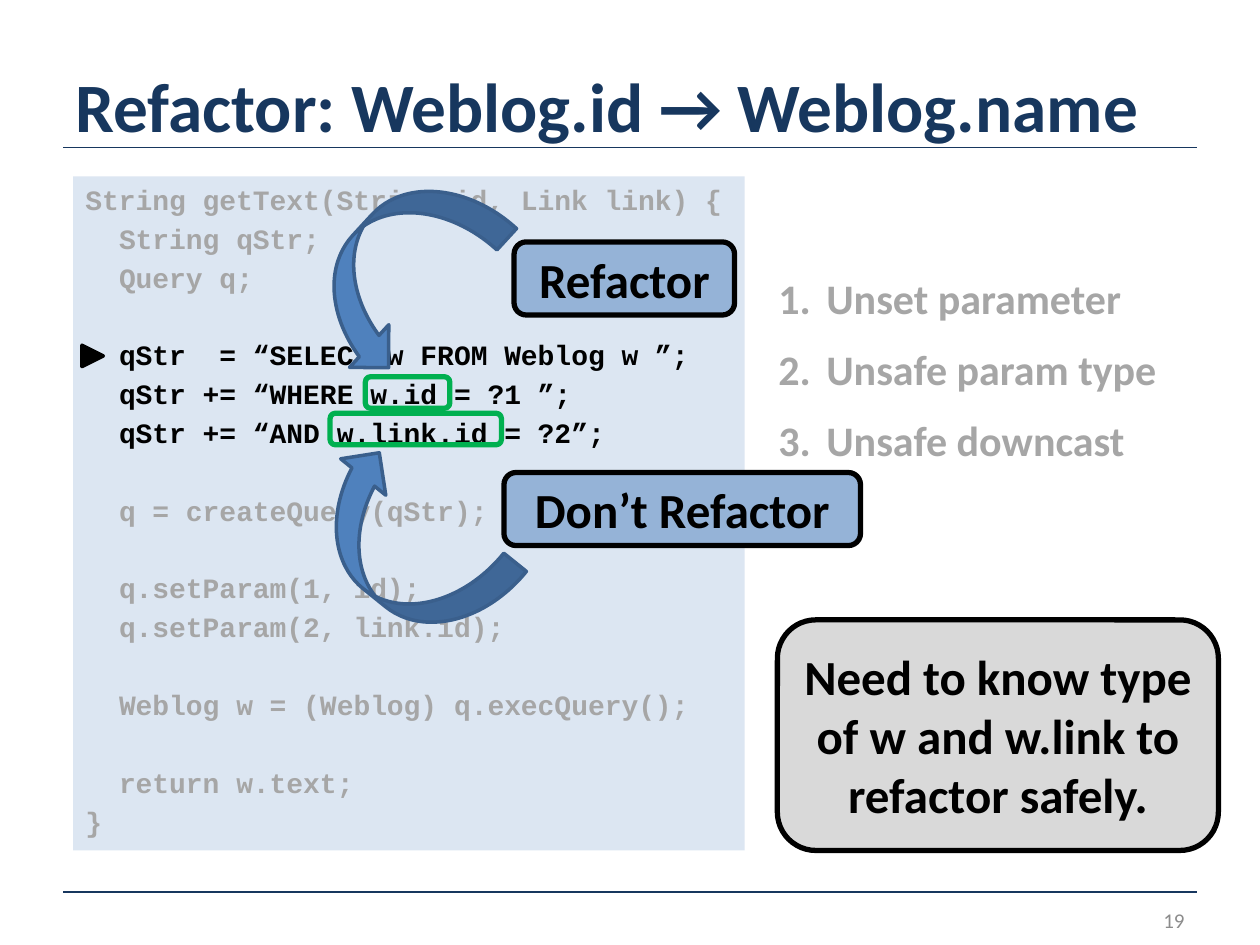
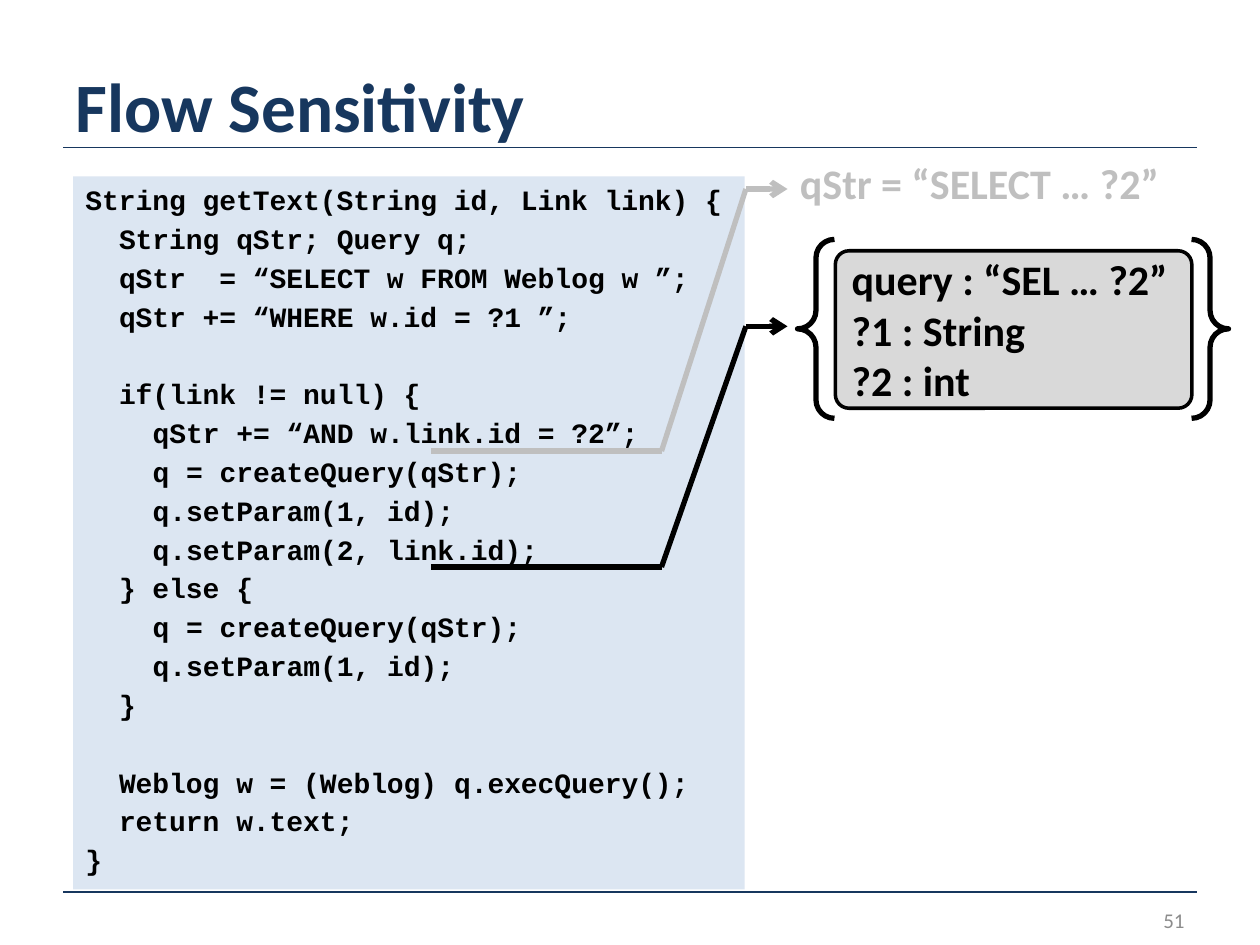
import pptx
import pptx.dml.color
import pptx.enum.shapes
import pptx.enum.text
import pptx.util
from lxml import etree
from pptx.oxml.ns import qn

Inches, Pt = pptx.util.Inches, pptx.util.Pt
SHAPE = pptx.enum.shapes.MSO_SHAPE
ALIGN = pptx.enum.text.PP_ALIGN
ANCHOR = pptx.enum.text.MSO_ANCHOR

NAVY, BLACK, GREY, PALE_GREY = "17375E", "000000", "A6A6A6", "BFBFBF"
CODE_BG, BUTTON, NOTE_BG, GREEN = "DCE6F2", "95B3D7", "D9D9D9", "00B050"
ARROW_FILL, ARROW_LINE, NUMBER = "4F81BD", "3A5F8C", "8C8C8C"
SANS, MONO = "Calibri", "Courier New"

CODE_SIZE = 16
CODE_GAP = 3         # points before each code line
CODE_PITCH = 22.2    # points from one code line to the next
CHAR_WIDTH = 9.6     # points, one monospaced character

REFACTOR_CODE = [
    "String getText(String id, Link link) {",
    "  String qStr;",
    "  Query q;",
    "",
    "  qStr  = “SELECT w FROM Weblog w ”;",
    "  qStr += “WHERE w.id = ?1 ”;",
    "  qStr += “AND w.link.id = ?2”;",
    "",
    "  q = createQuery(qStr);",
    "",
    "  q.setParam(1, id);",
    "  q.setParam(2, link.id);",
    "",
    "  Weblog w = (Weblog) q.execQuery();",
    "",
    "  return w.text;",
    "}",
]
QUERY_LINES = range(4, 7)

FLOW_CODE = [
    "String getText(String id, Link link) {",
    "  String qStr; Query q;",
    "  qStr  = “SELECT w FROM Weblog w ”;",
    "  qStr += “WHERE w.id = ?1 ”;",
    "",
    "  if(link != null) {",
    "    qStr += “AND w.link.id = ?2”;",
    "    q = createQuery(qStr);",
    "    q.setParam(1, id);",
    "    q.setParam(2, link.id);",
    "  } else {",
    "    q = createQuery(qStr);",
    "    q.setParam(1, id);",
    "  }",
    "",
    "  Weblog w = (Weblog) q.execQuery();",
    "  return w.text;",
    "}",
]

ERRORS = ["Unset parameter", "Unsafe param type", "Unsafe downcast"]
HIGHLIGHTS = [(2.9, 2.99, 0.67, 0.25), (2.62, 3.28, 1.36, 0.25)]
LABELS = [  # text, box, fill
    ("Refactor", (4.08, 1.92, 1.75, 0.58), BUTTON),
    ("Don’t Refactor", (4, 3.75, 2.83, 0.58), BUTTON),
    ("Need to know type of w and w.link to refactor safely.",
     (6.17, 4.92, 3.5, 1.83), NOTE_BG),
]
CURVED_ARROWS = [  # box, rotation, flipped
    ((2.31, 1.68, 1.73, 0.92), 132.6, False),
    ((2.35, 3.89, 1.73, 0.92), 218.9, True),
]
QUERY_STATE = ["query : “SEL … ?2”", "?1 : String", "?2 : int"]


def rgb(color):
    return pptx.dml.color.RGBColor.from_string(color)


def set_all(obj, values):
    for name, value in values.items():
        setattr(obj, name, value)


def paint(sp, fill=None, line=None, width=3):
    if fill:
        sp.fill.solid()
        sp.fill.fore_color.rgb = rgb(fill)
    else:
        sp.fill.background()
    if line:
        sp.line.color.rgb = rgb(line)
        sp.line.width = Pt(width)
    else:
        sp.line.fill.background()


def add_shape(s, kind, box, fill=None, line=None, width=3, adj=None):
    sp = s.shapes.add_shape(kind, *map(Inches, box))
    sp.shadow.inherit = False
    paint(sp, fill, line, width)
    if adj is not None:
        sp.adjustments[0] = adj
    return sp


def write(sp, lines, size, color, font=SANS, bold=True, wrap=True,
          anchor=ANCHOR.MIDDLE, **para):
    """Fill a shape with one paragraph per line and return the paragraphs."""
    tf = sp.text_frame
    set_all(tf, {"word_wrap": wrap, "vertical_anchor": anchor})
    paragraphs = []
    for i, line in enumerate(lines):
        p = tf.add_paragraph() if i else tf.paragraphs[0]
        set_all(p, {"alignment": ALIGN.LEFT, **para})
        r = p.add_run()
        r.text = line
        set_all(r.font, {"name": font, "size": Pt(size), "bold": bold})
        r.font.color.rgb = rgb(color)
        paragraphs.append(p)
    return paragraphs


def add_text(s, box, lines, size, color, **style):
    sp = s.shapes.add_textbox(*map(Inches, box))
    return write(sp, lines, size, color, **style)


def add_line(s, start, end, color, width=3, arrow=False):
    c = s.shapes.add_connector(pptx.enum.shapes.MSO_CONNECTOR.STRAIGHT,
                               *map(Inches, start + end))
    c.line.color.rgb = rgb(color)
    c.line.width = Pt(width)
    spPr = c.element.spPr
    if arrow:
        etree.SubElement(spPr.find(qn("a:ln")), qn("a:tailEnd"), type="arrow")
    etree.SubElement(spPr, qn("a:effectLst"))


def add_code(s, code, height, color, bright=()):
    """Code panel: indents become margins, empty lines become spacing."""
    sp = add_shape(s, SHAPE.RECTANGLE, (0.58, 1.4, 5.33, height), CODE_BG)
    shown = [(i, line) for i, line in enumerate(code) if line]
    paragraphs = write(sp, [line.lstrip() for _, line in shown], CODE_SIZE,
                       color, font=MONO, anchor=ANCHOR.TOP)
    previous = -1
    for p, (i, line) in zip(paragraphs, shown):
        p.space_before = Pt(CODE_GAP + (i - previous - 1) * CODE_PITCH)
        previous = i
        indent = len(line) - len(line.lstrip())
        p._p.get_or_add_pPr().set("marL", str(Pt(indent * CHAR_WIDTH)))
        if i in bright:
            p.runs[0].font.color.rgb = rgb(BLACK)


def add_numbered_list(s, box, items):
    for p in add_text(s, box, items, 24, GREY, anchor=ANCHOR.TOP,
                      space_after=Pt(12)):
        pPr = p._p.get_or_add_pPr()
        pPr.set("marL", str(Inches(0.38)))
        pPr.set("indent", str(Inches(-0.38)))
        etree.SubElement(pPr, qn("a:buFont"), typeface="+mj-lt")
        etree.SubElement(pPr, qn("a:buAutoNum"), type="arabicPeriod")


def add_flow_arrow(s, code_y, target_y, color):
    """Underline a code line and lead from it to the state on the right."""
    start, bend, edge, tip = 3.42, 5.25, 5.92, 6.25
    add_line(s, (edge, target_y), (tip, target_y), color, arrow=True)
    add_line(s, (start, code_y), (bend, code_y), color)
    add_line(s, (edge, target_y), (bend, code_y), color)


def new_slide(prs, title, number):
    s = prs.slides.add_slide(prs.slide_layouts[6])
    for y in (1.17, 7.08):
        add_line(s, (0.5, y), (9.5, y), NAVY, 1)
    add_text(s, (0.5, 0.5, 9, 0.67), [title], 39.6, NAVY)
    add_text(s, (7.17, 7.1, 2.33, 0.4), [str(number)], 12, NUMBER,
             bold=False, alignment=ALIGN.RIGHT)
    return s


def build_refactor(prs):
    s = new_slide(prs, "Refactor: Weblog.id → Weblog.name", 19)
    add_code(s, REFACTOR_CODE, 5.35, GREY, QUERY_LINES)
    add_numbered_list(s, (6.08, 2.11, 3.42, 1.65), ERRORS)
    for box in HIGHLIGHTS:
        add_shape(s, SHAPE.ROUNDED_RECTANGLE, box, line=GREEN)
    marker = add_shape(s, SHAPE.ISOSCELES_TRIANGLE, (0.65, 2.74, 0.17, 0.17),
                       BLACK, BLACK, 2)
    marker.rotation = 90
    for text, box, fill in LABELS:
        sp = add_shape(s, SHAPE.ROUNDED_RECTANGLE, box, fill, BLACK)
        write(sp, [text], 28, BLACK, alignment=ALIGN.CENTER)
    for box, rotation, flipped in CURVED_ARROWS:
        sp = add_shape(s, SHAPE.CURVED_UP_ARROW, box, ARROW_FILL, ARROW_LINE, 2)
        sp.rotation = rotation
        if flipped:
            sp.element.spPr.get_or_add_xfrm().set("flipV", "1")


def build_flow(prs):
    s = new_slide(prs, "Flow Sensitivity", 51)
    add_code(s, FLOW_CODE, 5.66, BLACK)
    add_shape(s, SHAPE.DOUBLE_BRACE, (6.33, 1.9, 3.42, 1.42), line=BLACK,
              adj=0.103)
    state = add_shape(s, SHAPE.ROUNDED_RECTANGLE, (6.63, 1.99, 2.83, 1.25),
                      NOTE_BG, BLACK, 2, adj=0.087)
    write(state, QUERY_STATE, 24, BLACK)
    add_flow_arrow(s, 4.5, 2.59, BLACK)
    query = add_shape(s, SHAPE.RECTANGLE, (6.25, 1.2, 3.08, 0.5),
                      line="FFFFFF", width=0.75)
    write(query, ["qStr = “SELECT … ?2”"], 24, PALE_GREY, wrap=False,
          anchor=ANCHOR.TOP)
    add_flow_arrow(s, 3.58, 1.5, PALE_GREY)


def main():
    prs = pptx.Presentation()
    set_all(prs, {"slide_width": Inches(10), "slide_height": Inches(7.5)})
    build_refactor(prs)
    build_flow(prs)
    prs.save("out.pptx")


if __name__ == "__main__":
    main()
